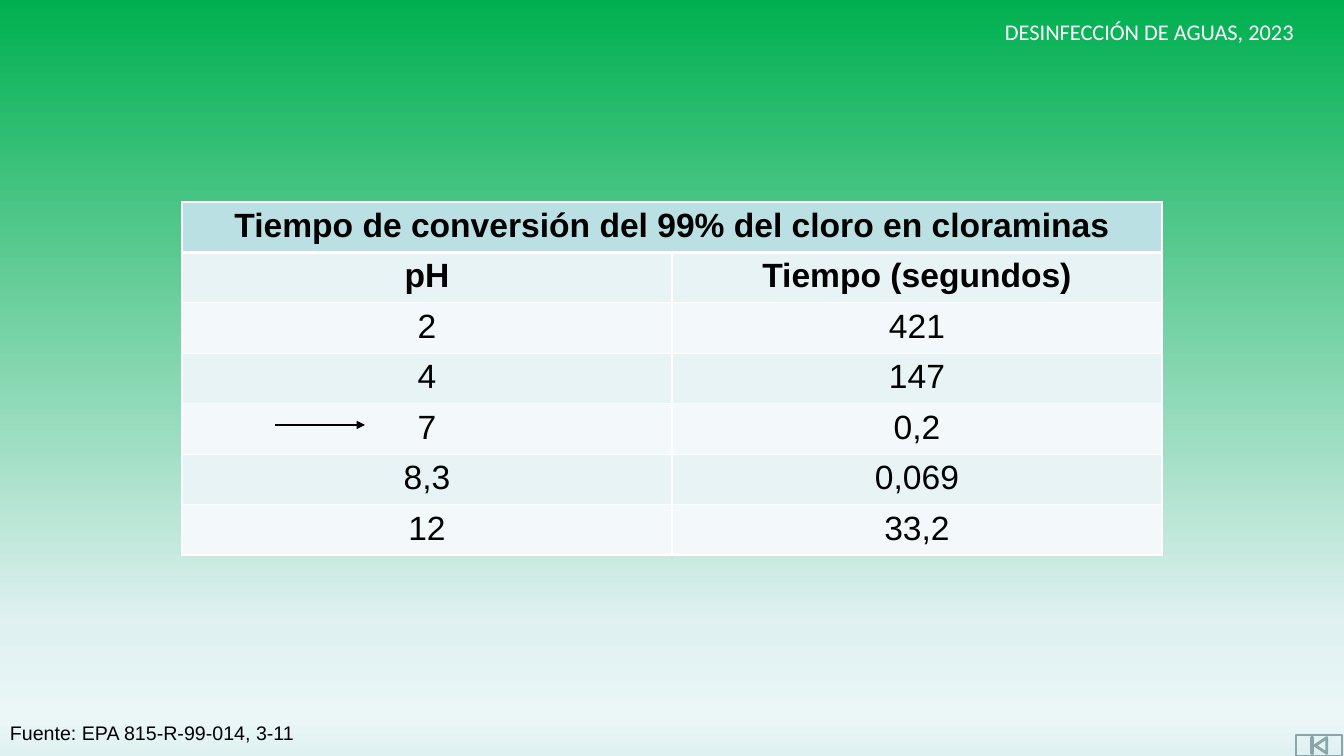
from lxml.etree import SubElement as Sub
from pptx import Presentation
from pptx.dml.color import RGBColor as RGB
from pptx.enum.shapes import MSO_CONNECTOR as Conn, MSO_SHAPE as Geo
from pptx.enum.text import PP_ALIGN as Align
from pptx.oxml.ns import qn
from pptx.util import Emu, Pt

WHITE = RGB(0xFF, 0xFF, 0xFF)
BLACK = RGB(0, 0, 0)
GRAY = RGB(0x8A, 0xA6, 0xA8)
GREEN = RGB(0, 0xB0, 0x50)
MIST = RGB(0xE0, 0xF1, 0xF2)
PALE = RGB(0xEB, 0xF6, 0xF7)
HEAD = RGB(0xBB, 0xE0, 0xE3)
BANDS = [RGB(0xF3, 0xF9, 0xFA), RGB(0xE7, 0xF3, 0xF4)]

STOPS = [(0, GREEN), (83, MIST), (95, PALE), (100, MIST)]
ROWS = [
    ("Tiempo de conversión del 99% del cloro en cloraminas", ""),
    ("pH", "Tiempo (segundos)"),
    ("2", "421"),
    ("4", "147"),
    ("7", "0,2"),
    ("8,3", "0,069"),
    ("12", "33,2"),
]


def px(*vals):
    """Turn whole pixels into EMU lengths."""
    return [Emu(round(val * 914400 / 100.8)) for val in vals]


def write(frame, text, size=24, font="Arial", color=BLACK, bold=False, align=Align.CENTER):
    """Put one formatted line of text into a frame."""
    para = frame.paragraphs[0]
    para.alignment = align
    run = para.add_run()
    run.text = text
    run.font.size = Pt(size)
    run.font.name = font
    run.font.bold = bold
    run.font.color.rgb = color


def tint(node, color):
    """Add an RGB colour to an XML node."""
    Sub(node, qn("a:srgbClr"), val=str(color))


class Page:
    """Style and drawing methods for the current slide."""

    def __init__(self, deck):
        self.slide = deck.slides.add_slide(deck.slide_layouts[6])
        self.shapes = self.slide.shapes

    def ground(self, stops):
        """Fill the background with a vertical gradient."""
        fill = self.slide.background.fill
        fill.gradient()
        fill.gradient_angle = 270
        nodes = self.slide.element.find(".//" + qn("a:gsLst"))
        for node in list(nodes):
            nodes.remove(node)
        for place, color in stops:
            tint(Sub(nodes, qn("a:gs"), pos=str(place * 1000)), color)

    def text(self, box, text, **form):
        """Add a wrapped text box."""
        frame = self.shapes.add_textbox(*px(*box)).text_frame
        frame.word_wrap = True
        write(frame, text, **form)

    def button(self, box, color):
        """Add an outlined button that leads to the start."""
        shape = self.shapes.add_shape(Geo.ACTION_BUTTON_BEGINNING, *px(*box))
        shape.shadow.inherit = False
        shape.fill.background()
        shape.line.color.rgb = color
        shape.line.width = Pt(2)

    def edge(self, cell, row):
        """Draw the white borders of a cell, thick below the title."""
        props = cell._tc.get_or_add_tcPr()
        for side in "LRTB":
            thick = (row, side) in [(0, "B"), (1, "T")]
            line = Sub(props, qn("a:ln" + side), w=str(Pt(3 if thick else 1)))
            tint(Sub(line, qn("a:solidFill")), WHITE)

    def table(self, box, rows):
        """Add a banded table under a merged title row."""
        table = self.shapes.add_table(len(rows), len(rows[0]), *px(*box)).table
        table.cell(0, 0).merge(table.cell(0, len(rows[0]) - 1))
        for i, row in enumerate(rows):
            for j, text in enumerate(row):
                cell = table.cell(i, j)
                self.edge(cell, i)
                cell.fill.solid()
                cell.fill.fore_color.rgb = BANDS[i % 2] if i else HEAD
                if text:
                    write(cell.text_frame, text, bold=i < 2)

    def arrow(self, ends, color):
        """Add a thin straight arrow."""
        link = self.shapes.add_connector(Conn.STRAIGHT, *px(*ends))
        link.line.color.rgb = color
        link.line.width = Pt(0.75)
        Sub(link.line._get_or_add_ln(), qn("a:tailEnd"), type="triangle")
        Sub(link._element.spPr, qn("a:effectLst"))


def main():
    """Build and save the slide."""
    deck = Presentation()
    deck.slide_width, deck.slide_height = px(1344, 756)
    page = Page(deck)
    page.ground(STOPS)
    page.button((1296, 735, 46, 21), GRAY)
    page.text((990, 13, 319, 37), "DESINFECCIÓN DE AGUAS, 2023",
              size=16, font="Calibri", color=WHITE)
    page.table((182, 202, 980, 353), ROWS)
    page.text((0, 716, 482, 34), "Fuente: EPA 815-R-99-014, 3-11",
              size=14, align=Align.LEFT)
    page.arrow((275, 425, 365, 425), BLACK)
    deck.save("out.pptx")


if __name__ == "__main__":
    main()
